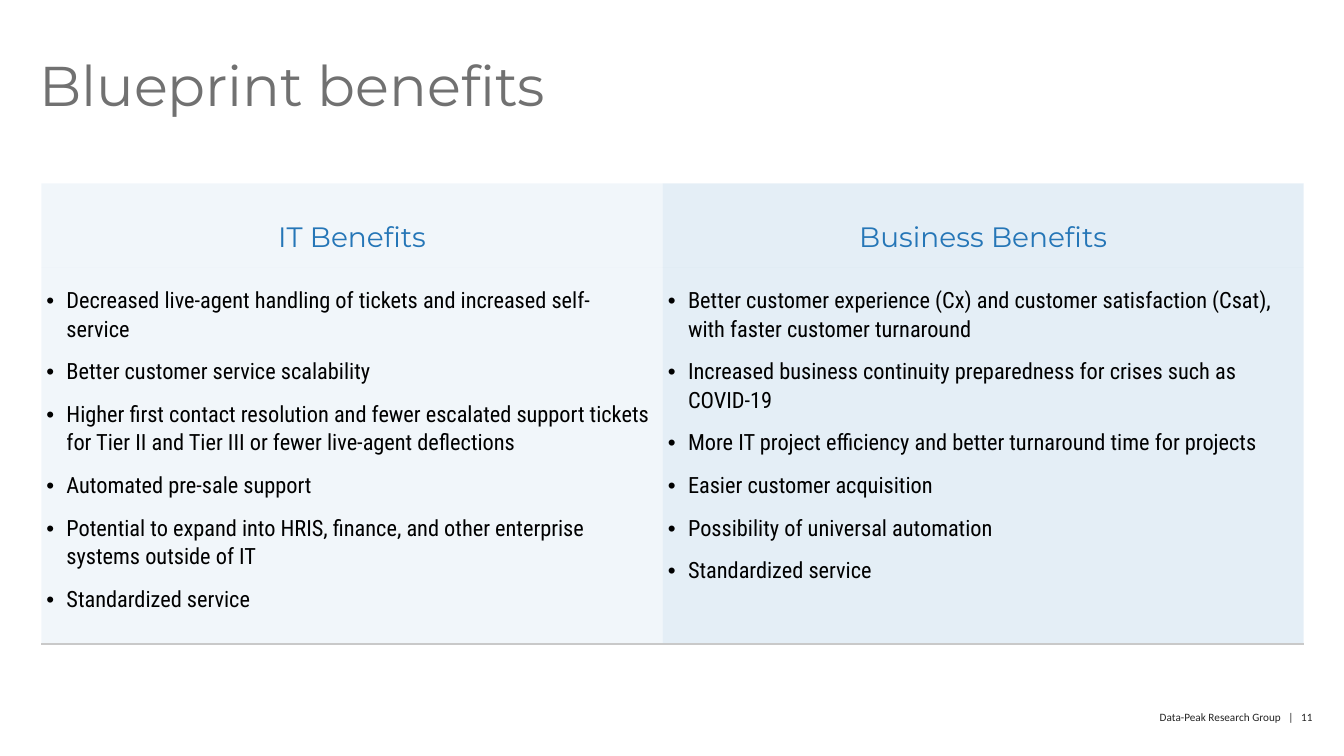
from dataclasses import dataclass
from lxml import etree
from pptx import Presentation
from pptx import util as u
from pptx.dml import color
from pptx.enum import text
from pptx.oxml import ns


@dataclass(frozen=True)
class Theme:
    head: str = "Montserrat"
    body: str = "Roboto Condensed"
    small: str = "Calibri"
    grey: str = "717171"
    blue: str = "2576B7"
    black: str = "000000"
    dark: str = "242424"
    tint: str = "7CADD4"
    rule: str = "C9C9C9"
    title: int = 40
    label: int = 20
    item: int = 16
    foot: int = 8


def add(parent, tag, **attrs):
    return etree.SubElement(parent, ns.qn(tag), attrs)


class Deck:
    def __init__(self, theme):
        self.theme = theme
        self.prs = Presentation()
        self.prs.slide_width = u.Inches(13.34)
        self.prs.slide_height = u.Inches(7.5)
        self.slide = self.prs.slides.add_slide(self.prs.slide_layouts[6])

    def font(self, para, name, size, tone):
        para.font.name = name
        para.font.size = u.Pt(size)
        para.font.color.rgb = color.RGBColor.from_string(tone)

    def inset(self, part, left, top, right, bottom):
        part.margin_left, part.margin_top = u.Inches(left), u.Inches(top)
        part.margin_right, part.margin_bottom = u.Inches(right), u.Inches(bottom)

    def label(self, words, box, name, size, tone, right=0, align=None, space=1):
        frame = self.slide.shapes.add_textbox(*map(u.Inches, box)).text_frame
        frame.word_wrap = True
        self.inset(frame, 0, 0, right, 0)
        para = frame.paragraphs[0]
        para.text = words
        para.alignment = align
        para.line_spacing = space
        self.font(para, name, size, tone)

    def paint(self, cell, alpha, ruled):
        """Tint a cell and clear its borders, bar an optional bottom rule."""
        cell.fill.solid()
        cell.fill.fore_color.rgb = color.RGBColor.from_string(self.theme.tint)
        props = cell._tc.get_or_add_tcPr()
        add(props.find(".//" + ns.qn("a:srgbClr")), "a:alpha", val=str(alpha * 1000))
        for pos, side in enumerate("LRTB"):
            line = add(props, "a:ln" + side, w=str(u.Pt(1)))
            if ruled and side == "B":
                add(add(line, "a:solidFill"), "a:srgbClr", val=self.theme.rule)
            else:
                add(line, "a:noFill")
            props.insert(pos, line)

    def bullets(self, cell, items):
        frame = cell.text_frame
        for pos, words in enumerate(items):
            para = frame.add_paragraph() if pos else frame.paragraphs[0]
            para.text = words
            para.line_spacing = 1.1
            para.space_before = u.Pt(10 if pos else 0)
            props = para._p.get_or_add_pPr()
            props.set("marL", str(u.Inches(0.2)))
            props.set("indent", str(u.Inches(-0.2)))
            add(props, "a:buFont", typeface="Arial")
            add(props, "a:buChar", char="•")
            self.font(para, self.theme.body, self.theme.item, self.theme.black)

    def table(self, groups, box, widths, heights):
        t = self.theme
        grid = self.slide.shapes.add_table(2, len(groups), *map(u.Inches, box)).table
        grid.first_row = grid.horz_banding = False
        for row, high in zip(grid.rows, heights):
            row.height = u.Inches(high)
        for col, (name, alpha, items) in enumerate(groups):
            grid.columns[col].width = u.Inches(widths[col])
            top, body = grid.cell(0, col), grid.cell(1, col)
            # Column heading
            self.paint(top, alpha, False)
            self.inset(top, 0.12, 0.24, 0.12, 0.12)
            top.vertical_anchor = text.MSO_ANCHOR.BOTTOM
            para = top.text_frame.paragraphs[0]
            para.text = name
            para.alignment = text.PP_ALIGN.CENTER
            self.font(para, t.head, t.label, t.blue)
            # Column list
            self.paint(body, alpha, True)
            self.inset(body, 0.05, 0.18, 0.12, 0.16)
            body.vertical_anchor = text.MSO_ANCHOR.TOP
            self.bullets(body, items)


GROUPS = [
    ("IT Benefits", 10, [
        "Decreased live-agent handling of tickets and increased self-service",
        "Better customer service scalability",
        "Higher first contact resolution and fewer escalated support tickets "
        "for Tier II and Tier III or fewer live-agent deflections",
        "Automated pre-sale support",
        "Potential to expand into HRIS, finance, and other enterprise systems outside of IT",
        "Standardized service",
    ]),
    ("Business Benefits", 20, [
        "Better customer experience (Cx) and customer satisfaction (Csat), "
        "with faster customer turnaround",
        "Increased business continuity preparedness for crises such as COVID-19",
        "More IT project efficiency and better turnaround time for projects",
        "Easier customer acquisition",
        "Possibility of universal automation",
        "Standardized service",
    ]),
]


def main():
    t = Theme()
    deck = Deck(t)
    # Title
    deck.label("Blueprint benefits", (0.39, 0.58, 9.24, 1.24),
               t.head, t.title, t.grey, space=0.9)
    # Benefits table
    deck.table(GROUPS, (0.41, 1.82, 12.53, 4.57), (6.17, 6.36), (0.83, 3.74))
    # Footer
    deck.label("Data-Peak Research Group\u00a0\u00a0 |\u00a0\u00a0 11".replace("\u00a0", " "),
               (9.37, 7.05, 3.76, 0.13), t.small, t.foot, t.dark,
               right=0.1, align=text.PP_ALIGN.RIGHT)
    deck.prs.save("out.pptx")


if __name__ == "__main__":
    main()
